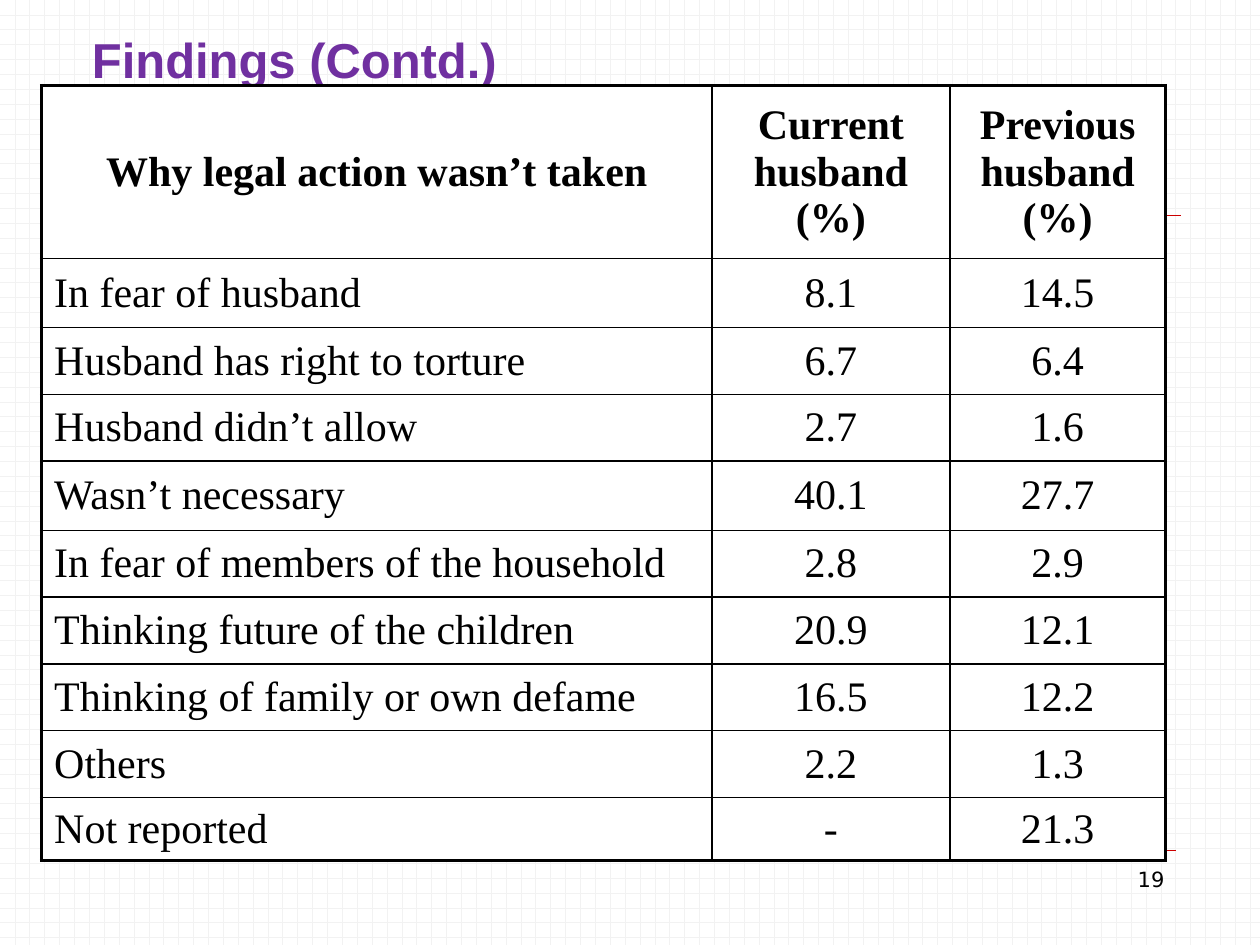
import pptx
import pptx.util
import pptx.dml.color
import pptx.enum.dml
import pptx.enum.text
import pptx.oxml
import pptx.oxml.ns
from lxml import etree

Inches = pptx.util.Inches
Pt = pptx.util.Pt
ALIGN = pptx.enum.text.PP_ALIGN
ANCHOR = pptx.enum.text.MSO_ANCHOR
WIDE, HIGH = 10, 7.5
INK, RED = "000000", "CC0000"

HEAD = ["Why legal action wasn’t taken", "Current husband (%)", "Previous husband (%)"]
BODY = [
    ["In fear of husband", "8.1", "14.5"],
    ["Husband has right to torture", "6.7", "6.4"],
    ["Husband didn’t allow", "2.7", "1.6"],
    ["Wasn’t necessary", "40.1", "27.7"],
    ["In fear of members of the household", "2.8", "2.9"],
    ["Thinking future of the children", "20.9", "12.1"],
    ["Thinking of family or own defame", "16.5", "12.2"],
    ["Others", "2.2", "1.3"],
    ["Not reported", "-", "21.3"],
]
COLS = [5.32, 1.89, 1.71]
ROWS = [1.37, 0.55, 0.53, 0.53, 0.55, 0.53, 0.53, 0.53, 0.53, 0.5]


def tint(code):
    return pptx.dml.color.RGBColor.from_string(code)


def write(frame, text, size, face, code=INK, bold=False, align=ALIGN.LEFT):
    frame.text = text
    frame.word_wrap = True
    para = frame.paragraphs[0]
    para.alignment = align
    font = para.runs[0].font
    font.size, font.name, font.bold = Pt(size), face, bold
    font.color.rgb = tint(code)


def place(shape, box):
    shape.left, shape.top, shape.width, shape.height = map(Inches, box)


def edge(cell, widths):
    props = cell._tc.get_or_add_tcPr()
    for spot, (side, width) in enumerate(widths.items()):
        line = etree.Element(pptx.oxml.ns.qn("a:ln" + side), w=str(Pt(width)))
        fill = etree.SubElement(line, pptx.oxml.ns.qn("a:solidFill"))
        etree.SubElement(fill, pptx.oxml.ns.qn("a:srgbClr"), val=INK)
        props.insert(spot, line)


def rules(slide, box):
    left, top, width, height = box
    mid, right, low = left + 0.585 * width, left + width, top + height
    pen = slide.shapes.build_freeform(Inches(left), Inches(top), scale=1.0)
    spots = [(mid, top), (mid, low), (left, low)]
    pen.add_line_segments([(Inches(x), Inches(y)) for x, y in spots], close=True)
    pen.move_to(Inches(left), Inches(top))
    pen.add_line_segments([(Inches(right), Inches(top))], close=False)
    bar = pen.convert_to_shape()
    bar.shadow.inherit = False
    bar.fill.solid()
    bar.fill.fore_color.rgb = tint(RED)
    bar.line.color.rgb = tint(RED)
    bar.line.width = Pt(0.75)

    base = Inches(0.9 * HIGH)
    foot = slide.shapes.add_connector(1, Inches(left), base, Inches(9.33), base)
    foot.line.color.rgb = tint(RED)
    foot.line.width = Pt(0.25)
    etree.SubElement(foot._element.spPr, pptx.oxml.ns.qn("a:effectLst"))


def title(slide, box):
    shape = slide.shapes.title
    place(shape, box)
    write(shape.text_frame, "Findings (Contd.)", 28, "Arial", "7030A0", True)
    shape.text_frame.vertical_anchor = ANCHOR.BOTTOM


def grid(slide, left, top):
    data = [HEAD] + BODY
    box = map(Inches, (left, top, sum(COLS), sum(ROWS)))
    table = slide.shapes.add_table(len(data), len(COLS), *box).table
    table.horz_banding = False
    for col, width in zip(table.columns, COLS):
        col.width = Inches(width)
    for r, (row, high) in enumerate(zip(table.rows, ROWS)):
        row.height = Inches(high)
        for c, cell in enumerate(row.cells):
            align = ALIGN.CENTER if r == 0 or c else ALIGN.LEFT
            write(cell.text_frame, data[r][c], 24, "Times New Roman",
                  bold=r == 0, align=align)
            cell.vertical_anchor = ANCHOR.MIDDLE
            cell.fill.solid()
            cell.fill.fore_color.rgb = tint("FFFFFF")
            outer = {"L": c == 0, "R": c == len(COLS) - 1,
                     "T": r == 0, "B": r == len(data) - 1}
            edge(cell, {side: 2.25 if out else 1 for side, out in outer.items()})


def number(slide, box):
    shape = slide.shapes.add_textbox(*map(Inches, box))
    write(shape.text_frame, "19", 12, "DejaVu Sans", align=ALIGN.RIGHT)


def main():
    deck = pptx.Presentation()
    deck.slide_width, deck.slide_height = Inches(WIDE), Inches(HIGH)
    slide = deck.slides.add_slide(deck.slide_layouts[5])
    back = slide.background.fill
    back.patterned()
    back.pattern = pptx.enum.dml.MSO_PATTERN.HORIZONTAL_BRICK
    back.fore_color.rgb = tint("F2F2F2")
    back.back_color.rgb = tint("FFFFFF")
    rules(slide, (0.67, 1.71, 8.7, 0.12))
    title(slide, (0.63, 0.18, 8.75, 0.57))
    grid(slide, 0.33, 0.68)
    number(slide, (7.17, 6.83, 2.17, 0.52))
    deck.save("out.pptx")


if __name__ == "__main__":
    main()
